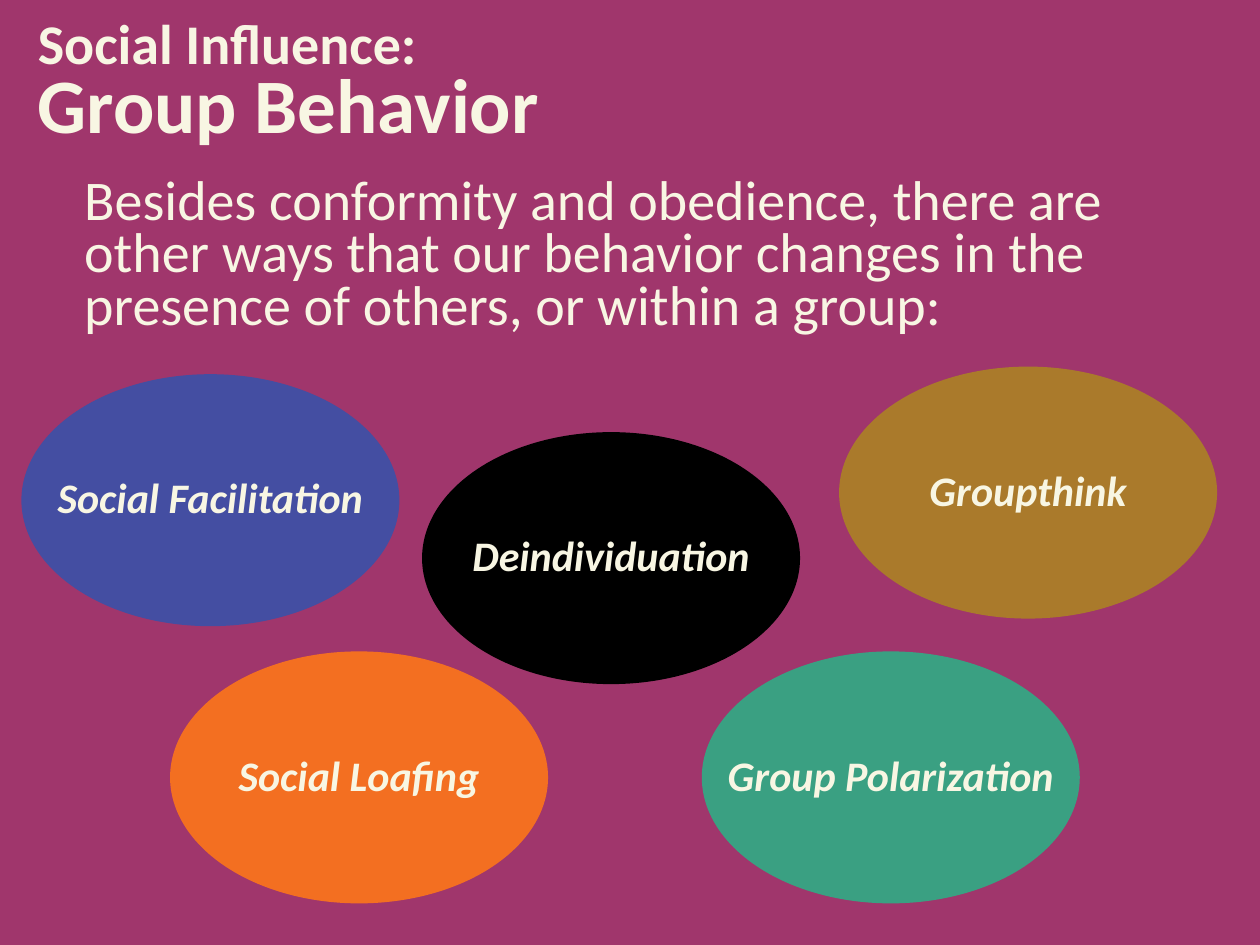
from dataclasses import dataclass

from pptx import Presentation
from pptx.dml.color import RGBColor
from pptx.enum.shapes import MSO_SHAPE
from pptx.enum.text import MSO_ANCHOR, PP_ALIGN
from pptx.slide import Slide
from pptx.text.text import TextFrame
from pptx.util import Inches, Pt

OVAL = MSO_SHAPE.OVAL
MIDDLE = MSO_ANCHOR.MIDDLE
LEFT = PP_ALIGN.LEFT
CENTER = PP_ALIGN.CENTER


@dataclass(frozen=True)
class Theme:
    font: str = "Calibri"
    back: str = "A0366C"
    cream: str = "F8F6E3"
    blue: str = "444EA2"
    orange: str = "F36F21"
    black: str = "000000"
    green: str = "3AA082"
    gold: str = "AA7A2B"
    title: int = 44
    body: int = 32
    label: int = 24


@dataclass(frozen=True)
class Topic:
    text: str
    left: float
    top: float
    fill: str


THEME = Theme()
WIDTH, HEIGHT = 3, 2
TOPICS = [
    Topic("Social Facilitation", 0.17, 2.97, THEME.blue),
    Topic("Social Loafing", 1.35, 5.17, THEME.orange),
    Topic("Deindividuation", 3.35, 3.43, THEME.black),
    Topic("Group Polarization", 5.57, 5.17, THEME.green),
    Topic("Groupthink", 6.66, 2.91, THEME.gold),
]


def write(frame: TextFrame, *lines: tuple[str, int], bold: bool = False,
          italic: bool = False, align: PP_ALIGN = LEFT,
          space: Pt | float = 1.0, wrap: bool = True,
          inset: float = 0.1) -> None:
    frame.word_wrap = wrap
    frame.vertical_anchor = MIDDLE
    frame.margin_left = Inches(inset)
    para = frame.paragraphs[0]
    para.alignment = align
    para.line_spacing = space
    for index, (text, size) in enumerate(lines):
        if index:
            para.add_line_break()
        run = para.add_run()
        run.text = text
        font = run.font
        font.name = THEME.font
        font.size = Pt(size)
        font.bold = bold
        font.italic = italic
        font.color.rgb = RGBColor.from_string(THEME.cream)


def add_box(slide: Slide, left: float, top: float,
            width: float, height: float) -> TextFrame:
    return slide.shapes.add_textbox(
        Inches(left), Inches(top), Inches(width), Inches(height)).text_frame


def add_oval(slide: Slide, topic: Topic) -> None:
    oval = slide.shapes.add_shape(
        OVAL, Inches(topic.left), Inches(topic.top),
        Inches(WIDTH), Inches(HEIGHT))
    oval.shadow.inherit = False
    oval.fill.solid()
    oval.fill.fore_color.rgb = RGBColor.from_string(topic.fill)
    oval.line.fill.background()
    write(oval.text_frame, (topic.text, THEME.label), bold=True, italic=True,
          align=CENTER, space=0.9, wrap=False)


def main() -> None:
    deck = Presentation()
    deck.slide_width, deck.slide_height = Inches(10), Inches(7.5)
    slide = deck.slides.add_slide(deck.slide_layouts[6])
    fill = slide.background.fill
    fill.solid()
    fill.fore_color.rgb = RGBColor.from_string(THEME.back)

    write(add_box(slide, 0, 0, 10, 1.2),
          ("Social Influence:", THEME.body), ("Group Behavior", THEME.title),
          bold=True, space=Pt(42), inset=0.3)
    write(add_box(slide, 0.57, 1.39, 9.18, 1.31),
          ("Besides conformity and obedience, there are other ways that our "
           "behavior changes in the presence of others, or within a group:",
           THEME.body), space=Pt(30))
    for topic in TOPICS:
        add_oval(slide, topic)
    deck.save("out.pptx")


if __name__ == "__main__":
    main()
